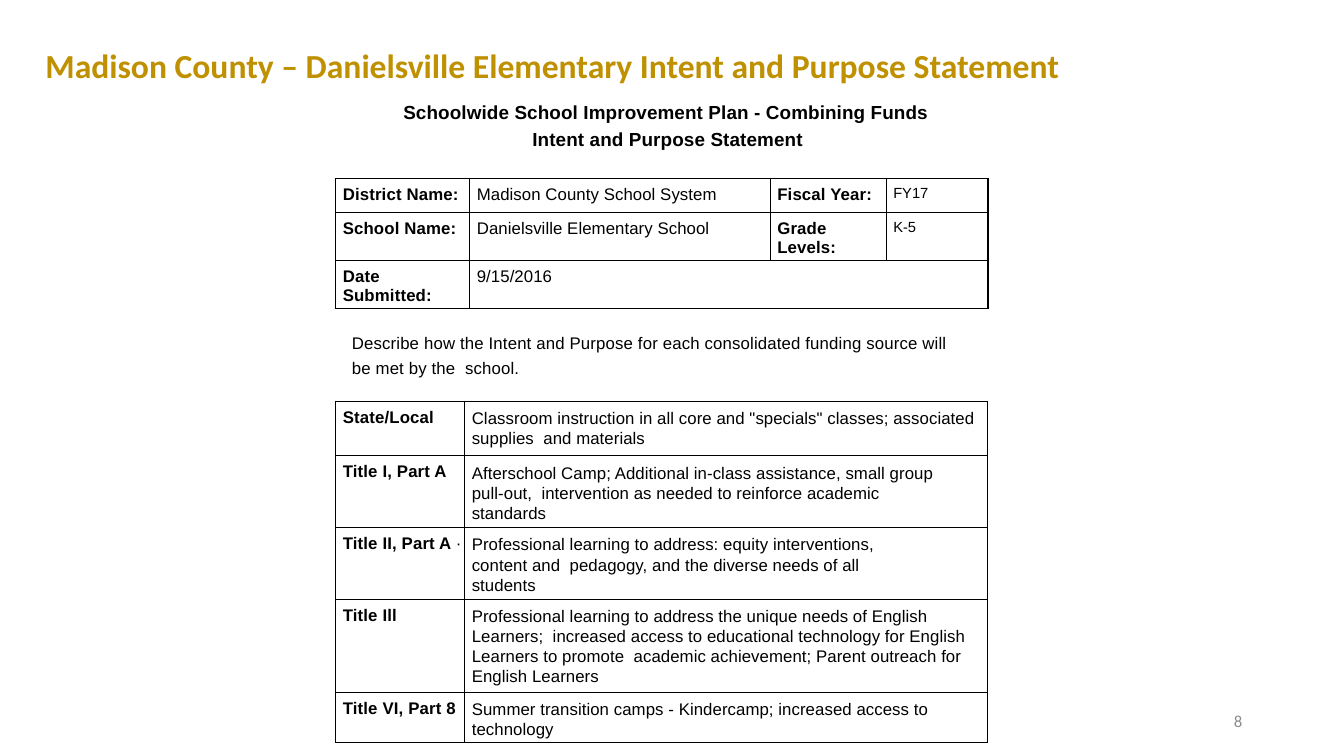
"""Build the Intent and Purpose Statement slide for Danielsville Elementary."""
from lxml import etree
from pptx import Presentation
from pptx.dml.color import RGBColor
from pptx.enum.text import MSO_ANCHOR, MSO_AUTO_SIZE, PP_ALIGN
from pptx.oxml.ns import qn
from pptx.util import Inches, Pt

BLACK = RGBColor(0x00, 0x00, 0x00)
GOLD = RGBColor(0xBF, 0x90, 0x00)
GRAY = RGBColor(0x8C, 0x8C, 0x8C)
LEFT, RIGHT = PP_ALIGN.LEFT, PP_ALIGN.RIGHT
MIDDLE = MSO_ANCHOR.MIDDLE
NO_AUTOFIT = MSO_AUTO_SIZE.NONE
THIN, THICK = 0.72, 1.08


def write(frame, text, size, bold=False, name="Arial", color=BLACK, tracking=0, line_spacing=None):
    para = frame.paragraphs[0]
    para.add_run().text = text
    para.font.name = name
    para.font.size = Pt(size)
    para.font.bold = bold
    para.font.color.rgb = color
    para.line_spacing = line_spacing
    para._p.pPr.find(qn("a:defRPr")).set("spc", str(tracking))
    return para


def outline(cell, left_width, right_width):
    properties = cell._tc.get_or_add_tcPr()
    for side, width in (("L", left_width), ("R", right_width), ("T", THIN), ("B", THIN)):
        line = etree.SubElement(properties, qn(f"a:ln{side}"), w=str(Pt(width)))
        fill = etree.SubElement(line, qn("a:solidFill"))
        etree.SubElement(fill, qn("a:srgbClr"), val=str(BLACK))
    cell.fill.background()
    cell.margin_left, cell.margin_top = Inches(0.07), Inches(0.07)
    cell.margin_right = cell.margin_bottom = 0


deck = Presentation()
deck.slide_width, deck.slide_height = Inches(13.33), Inches(7.5)
page = deck.slides.add_slide(deck.slide_layouts[5])

title = page.shapes.title
title.left, title.top = Inches(0.35), Inches(0.4)
title.width, title.height = Inches(10.36), Inches(0.5)
title.text_frame.auto_size = NO_AUTOFIT
title.text_frame.word_wrap = False
title.text_frame.vertical_anchor = MIDDLE
write(title.text_frame, "Madison County – Danielsville Elementary Intent and Purpose Statement",
      24, True, "Calibri", GOLD).alignment = LEFT

number_box = page.shapes.add_textbox(Inches(9.42), Inches(6.95), Inches(3), Inches(0.4))
number_box.text_frame.word_wrap = True
number_box.text_frame.vertical_anchor = MIDDLE
write(number_box.text_frame, "8", 12, name="Calibri", color=GRAY).alignment = RIGHT

PASSAGES = [
    ("Schoolwide School Improvement Plan - Combining Funds Intent and Purpose Statement",
     (3.98, 0.95, 5.34, 0.56), 13.5, True, 1.2, 1.3, -1.28),
    ("Describe how the Intent and Purpose for each consolidated funding source will be met by the  school.",
     (3.48, 3.26, 6.15, 0.47), 12, False, 1.23, 0.01, 0),
]
for text, place, size, bold, line_spacing, margin, indent in PASSAGES:
    frame = page.shapes.add_textbox(*map(Inches, place)).text_frame
    frame.word_wrap = True
    frame.margin_left = frame.margin_top = frame.margin_right = frame.margin_bottom = 0
    para = write(frame, text, size, bold, tracking=10, line_spacing=line_spacing)
    para._p.pPr.set("marL", str(Inches(margin)))
    para._p.pPr.set("indent", str(Inches(indent)))

SCHOOL_ROWS = [
    ("District Name:", "Madison County School System", "Fiscal Year:", "FY17"),
    ("School Name:", "Danielsville Elementary School", "Grade Levels:", "K-5"),
    ("Date Submitted:", "9/15/2016", "", ""),
]
FUNDING_ROWS = [
    ("State/Local", 'Classroom instruction in all core and "specials" classes; associated '
     "supplies  and materials"),
    ("Title I, Part A", "Afterschool Camp; Additional in-class assistance, small group pull-out,  "
     "intervention as needed to reinforce academic standards"),
    ("Title II, Part A ", "Professional learning to address: equity interventions, content and  "
     "pedagogy, and the diverse needs of all students"),
    ("Title Ill", "Professional learning to address the unique needs of English Learners;  "
     "increased access to educational technology for English Learners to promote  academic "
     "achievement; Parent outreach for English Learners"),
    ("Title VI, Part 8", "Summer transition camps - Kindercamp; increased access to technology"),
]
TABLES = [
    (SCHOOL_ROWS, 1.77, (1.33, 2.98, 1.15, 1.01), (0.34, 0.47, 0.48), THICK, None),
    (FUNDING_ROWS, 3.98, (1.28, 5.18), (0.54, 0.69, 0.7, 0.91, 0.47), THIN, 1.07),
]
tables = []
for rows, top, widths, heights, right_width, body_spacing in TABLES:
    table = page.shapes.add_table(len(rows), len(widths), Inches(3.33), Inches(top),
                                  Inches(sum(widths)), Inches(sum(heights))).table
    table.first_row = table.horz_banding = False
    for column, width in zip(table.columns, widths):
        column.width = Inches(width)
    for row, height, texts in zip(table.rows, heights, rows):
        row.height = Inches(height)
        for index, (cell, text) in enumerate(zip(row.cells, texts)):
            is_label = index % 2 == 0
            outline(cell, THICK if is_label else THIN, THIN if is_label else right_width)
            if text:
                write(cell.text_frame, text, 10.5 if index == 3 else 12, is_label,
                      tracking=12 if is_label else 6,
                      line_spacing=None if is_label else body_spacing)
    tables.append(table)

school_table, funding_table = tables
school_table.cell(2, 1).merge(school_table.cell(2, 3))
funding_table.cell(1, 1).margin_right = Inches(0.42)
funding_table.cell(2, 1).margin_right = Inches(0.85)
dot = funding_table.cell(2, 0).text_frame.paragraphs[0].add_run()
dot.text = "·"
dot.font.bold = False

deck.save("out.pptx")
